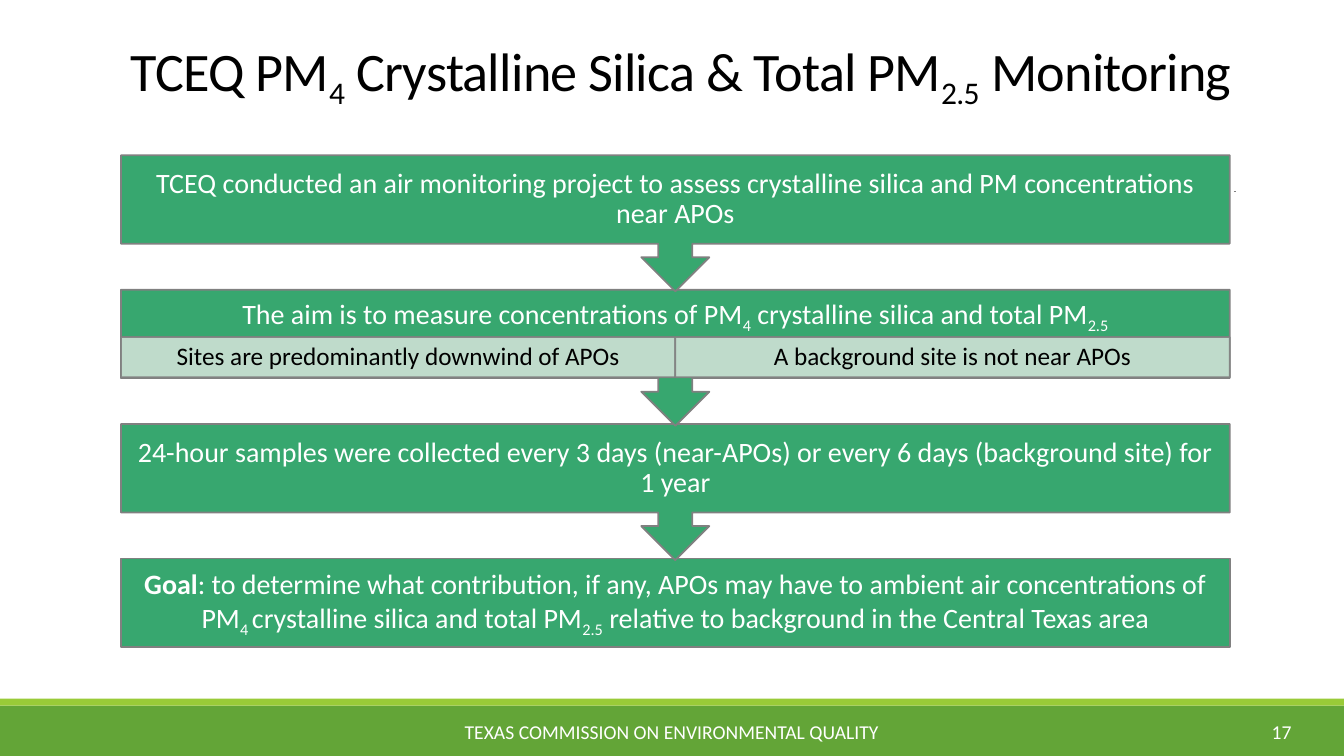
from dataclasses import dataclass
from pptx import Presentation
from pptx.dml.color import RGBColor
from pptx.enum.shapes import MSO_CONNECTOR, MSO_SHAPE
from pptx.enum.text import MSO_ANCHOR, PP_ALIGN
from pptx.oxml.ns import qn
from pptx.util import Pt
from lxml.etree import SubElement


@dataclass(frozen=True)
class Theme:
    font: str = "Calibri"
    step: str = "37A76F"
    site: str = "CEE1D5"
    edge: str = "808080"
    bar: str = "63A537"
    strip: str = "99CB38"
    dark: str = "000000"
    light: str = "FFFFFF"
    title: float = 38.7
    body: float = 20
    note: float = 18
    foot: float = 14


@dataclass(frozen=True)
class Box:
    x: float
    y: float
    w: float
    h: float


@dataclass(frozen=True)
class Step:
    text: str  # parts between ~ marks are subscripts
    lead: str = ""
    sites: tuple[str, ...] = ()


T = Theme()
LEFT, TOP, WIDE, PITCH = 86.4, 110.9, 792, 96
BODY, CALL, SITE = 63.3, 97.2, 28.8
STEPS = [
    Step("TCEQ conducted an air monitoring project to assess crystalline silica "
         "and PM concentrations near APOs"),
    Step("The aim is to measure concentrations of PM~4~ crystalline silica and total PM~2.5~",
         sites=("Sites are predominantly downwind of APOs",
                "A background site is not near APOs")),
    Step("24-hour samples were collected every 3 days (near-APOs) or every 6 days "
         "(background site) for 1 year"),
    Step(": to determine what contribution, if any, APOs may have to ambient air "
         "concentrations of PM~4 ~crystalline silica and total PM~2.5~ relative to "
         "background in the Central Texas area", lead="Goal"),
]


def write(shape, text: str, size: float, color: str, align=PP_ALIGN.CENTER,
          anchor=MSO_ANCHOR.MIDDLE, space: float = 0.9, lead: str = "",
          track: int = 0) -> None:
    frame = shape.text_frame
    frame.word_wrap = True
    frame.vertical_anchor = anchor
    para = frame.paragraphs[0]
    para.alignment = align
    para.line_spacing = space
    para.font.name = T.font
    para.font.size = Pt(size)
    para.font.color.rgb = RGBColor.from_string(color)
    if lead:
        run = para.add_run()
        run.text = lead
        run.font.bold = True
    for i, part in enumerate(text.split("~")):
        if not part:
            continue
        run = para.add_run()
        run.text = part
        props = run.font._element
        if i % 2:
            props.set("baseline", "-25000")
        if track:
            props.set("spc", str(track))


def inset(shape, side: float, low: float = 2) -> None:
    frame = shape.text_frame
    frame.margin_left = frame.margin_right = Pt(side)
    frame.margin_top, frame.margin_bottom = Pt(2), Pt(low)


def draw(slide, kind, box: Box, fill: str, edge: str = "", alpha: int = 100):
    shape = slide.shapes.add_shape(kind, Pt(box.x), Pt(box.y), Pt(box.w), Pt(box.h))
    shape.shadow.inherit = False
    shape.fill.solid()
    shape.fill.fore_color.rgb = RGBColor.from_string(fill)
    if edge:
        shape.line.color.rgb = RGBColor.from_string(edge)
        shape.line.width = Pt(1.25)
    else:
        shape.line.fill.background()
    if alpha < 100:
        for tint in shape._element.spPr.iter(qn("a:srgbClr")):
            SubElement(tint, qn("a:alpha")).set("val", str(alpha * 1000))
    return shape


def label(slide, box: Box):
    return slide.shapes.add_textbox(Pt(box.x), Pt(box.y), Pt(box.w), Pt(box.h))


def tick(slide, x: float, y: float, end: float) -> None:
    line = slide.shapes.add_connector(MSO_CONNECTOR.STRAIGHT, Pt(x), Pt(y), Pt(end), Pt(y))
    line.line.color.rgb = RGBColor.from_string(T.edge)
    line.line.width = Pt(0.5)
    SubElement(line._element.spPr, qn("a:effectLst"))


def flow(slide, step: Step, y: float, last: bool) -> None:
    kind = MSO_SHAPE.RECTANGLE if last else MSO_SHAPE.DOWN_ARROW_CALLOUT
    shape = draw(slide, kind, Box(LEFT, y, WIDE, BODY if last else CALL), T.step, T.edge)
    inset(shape, 11.5, SITE + 2 if step.sites else 2)
    write(shape, step.text, T.body, T.light, lead=step.lead)
    for i, site in enumerate(step.sites):
        w = WIDE / len(step.sites)
        cell = draw(slide, MSO_SHAPE.RECTANGLE,
                    Box(LEFT + i * w, y + BODY - SITE - 0.6, w, SITE), T.site, T.edge, 90)
        inset(cell, 10)
        write(cell, site, T.note, T.dark)


def main() -> None:
    deck = Presentation()
    deck.slide_width, deck.slide_height = Pt(960), Pt(540)
    slide = deck.slides.add_slide(deck.slide_layouts[6])

    # Footer band and short rule
    draw(slide, MSO_SHAPE.RECTANGLE, Box(0, 504, 960, 36), T.bar)
    draw(slide, MSO_SHAPE.RECTANGLE, Box(0, 499, 960, 5), T.strip)
    tick(slide, 881.3, 136.8, 882.7)
    write(label(slide, Box(826.6, 508.3, 103, 28.8)), "17", T.foot, T.light,
          PP_ALIGN.RIGHT, space=1)
    write(label(slide, Box(290.2, 508.3, 379.4, 28.8)),
          "TEXAS COMMISSION ON ENVIRONMENTAL QUALITY", T.foot, T.light, space=1)

    # Title
    write(label(slide, Box(LEFT, 9.4, 835.2, 68.4)),
          "TCEQ PM~4~ Crystalline Silica & Total PM~2.5~ Monitoring", T.title, T.dark,
          PP_ALIGN.LEFT, MSO_ANCHOR.BOTTOM, 0.85, track=-50)

    # Steps, drawn from the last up so each arrow lies over the next box
    for i, step in reversed(list(enumerate(STEPS))):
        flow(slide, step, TOP + i * PITCH, i == len(STEPS) - 1)

    deck.save("out.pptx")


if __name__ == "__main__":
    main()
